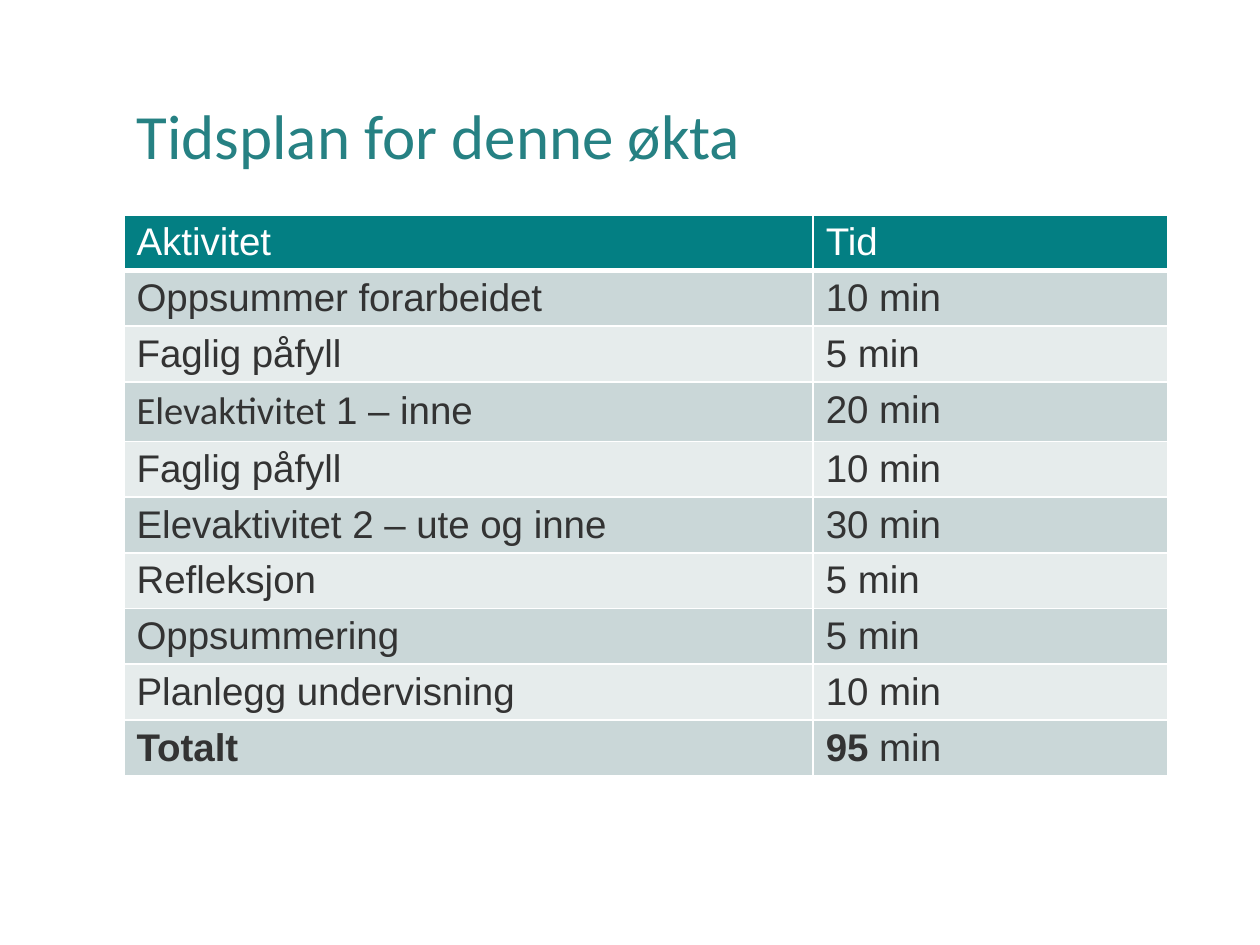
import pptx
import pptx.dml.color
import pptx.enum.text
import pptx.oxml
import pptx.oxml.ns
import pptx.util

Cm = pptx.util.Cm
Pt = pptx.util.Pt

HUES = {
    "title": "268183",
    "head": "037F83",
    "dark": "CAD7D8",
    "light": "E6ECEC",
    "text": "333333",
    "white": "FFFFFF",
}

ROWS = [
    ("Aktivitet", "Tid"),
    ("Oppsummer forarbeidet", "10 min"),
    ("Faglig påfyll", "5 min"),
    ([("Elevaktivite", {"font": "Calibri"}), ("t 1 – inne", {})], "20 min"),
    ("Faglig påfyll", "10 min"),
    ("Elevaktivitet 2 – ute og inne", "30 min"),
    ("Refleksjon", "5 min"),
    ("Oppsummering", "5 min"),
    ("Planlegg undervisning", "10 min"),
    ([("Totalt", {"bold": True})], [("95", {"bold": True}), (" min", {})]),
]


def shade(name):
    """Return the named colour."""
    return pptx.dml.color.RGBColor.from_string(HUES[name])


def write(para, text, font="Arial", size=22, hue="text", bold=False):
    """Add one formatted run to a paragraph."""
    run = para.add_run()
    run.text = text
    run.font.name = font
    run.font.size = Pt(size)
    run.font.bold = bold
    run.font.color.rgb = shade(hue)


def rule(cell, side, width):
    """Draw a white border on one side of a cell."""
    line = pptx.oxml.parse_xml(
        f'<a:ln{side} {pptx.oxml.ns.nsdecls("a")} w="{Pt(width)}"><a:solidFill>'
        f'<a:srgbClr val="{HUES["white"]}"/></a:solidFill></a:ln{side}>'
    )
    cell._tc.get_or_add_tcPr().append(line)


def title(slide, left, top, width, height):
    """Place and fill the title in its box."""
    shape = slide.shapes.title
    shape.left, shape.top, shape.width, shape.height = left, top, width, height
    frame = shape.text_frame
    frame.word_wrap = True
    frame.auto_size = pptx.enum.text.MSO_AUTO_SIZE.NONE
    frame.vertical_anchor = pptx.enum.text.MSO_ANCHOR.MIDDLE
    para = frame.paragraphs[0]
    para.alignment = pptx.enum.text.PP_ALIGN.LEFT
    para.line_spacing = 0.9
    write(para, "Tidsplan for denne økta", font="Calibri", size=36, hue="title")


def plan(slide, left, top, width, height):
    """Build the table of activities and times in its box."""
    table = slide.shapes.add_table(len(ROWS), 2, left, top, width, height).table
    table.columns[0].width = int(width * 0.66)
    table.columns[1].width = width - table.columns[0].width
    for r, row in enumerate(ROWS):
        head = r == 0
        fill = "head" if head else "dark" if r % 2 else "light"
        for c, parts in enumerate(row):
            cell = table.cell(r, c)
            for side in "LRTB":
                thick = (head and side == "B") or (r == 1 and side == "T")
                rule(cell, side, 3 if thick else 1)
            cell.fill.solid()
            cell.fill.fore_color.rgb = shade(fill)
            if isinstance(parts, str):
                parts = [(parts, {})]
            for text, form in parts:
                hue = "white" if head else "text"
                write(cell.text_frame.paragraphs[0], text, hue=hue, **form)


def main():
    """Build and save the slide."""
    deck = pptx.Presentation()
    deck.slide_width, deck.slide_height = Cm(25.4), Cm(19.05)
    slide = deck.slides.add_slide(deck.slide_layouts[5])
    left, width = Cm(2.5), Cm(21.05)
    title(slide, left, Cm(0.97), width, Cm(3.68))
    plan(slide, left, Cm(4.33), width, Cm(10.4))
    deck.save("out.pptx")


if __name__ == "__main__":
    main()
